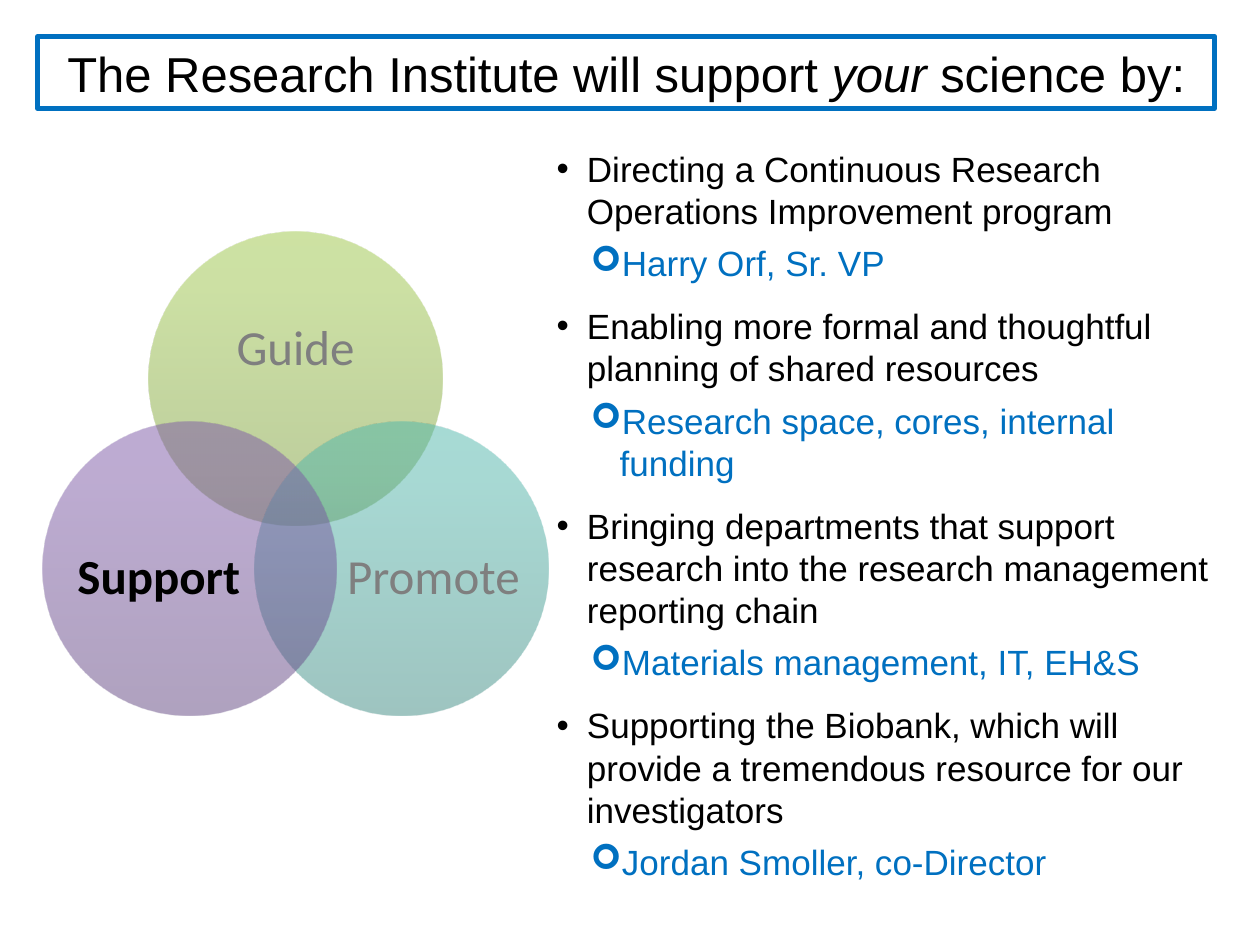
from lxml.etree import SubElement
from pptx import Presentation
from pptx.dml.color import RGBColor
from pptx.enum.shapes import MSO_SHAPE
from pptx.enum.text import MSO_ANCHOR, PP_ALIGN
from pptx.oxml.ns import qn
from pptx.util import Inches, Pt

BLUE, BLACK, GREY = "0070C0", "000000", "7F7F7F"


def add_run(p, text, size, color, font="Arial"):
    r = p.add_run()
    r.text = text
    r.font.size = Pt(size)
    r.font.name = font
    r.font.color.rgb = RGBColor.from_string(color)
    return r


def set_bullet(p, char, font, margin, hanging):
    """Give the paragraph a bullet; margin and hanging are in inches."""
    pPr = p._p.get_or_add_pPr()
    pPr.set("marL", str(Inches(margin)))
    pPr.set("indent", str(-Inches(hanging)))
    SubElement(pPr, qn("a:buFont"), typeface=font)
    SubElement(pPr, qn("a:buChar"), char=char)


prs = Presentation()
prs.slide_width, prs.slide_height = Inches(10), Inches(7.5)
s = prs.slides.add_slide(prs.slide_layouts[6])

# Venn diagram: circle position, gradient from bottom to top, label box
DIAMETER = 2.33
circles = [
    ("Guide", 1.18, 1.84, ("779737", "9BC348", "9DC746"), (1.49, 2.25, 1.71, 1.05)),
    ("Promote", 2.02, 3.35, ("3D8B83", "50B5AA", "4EB8AC"), (2.74, 3.95, 1.4, 1.28)),
    ("Support", 0.34, 3.35, ("5F4480", "7B58A6", "7C57A8"), (0.56, 3.95, 1.4, 1.28)),
]
venn = s.shapes.add_group_shape()
for label, x, y, colors, box in circles:
    sp = venn.shapes.add_shape(MSO_SHAPE.OVAL, Inches(x), Inches(y),
                               Inches(DIAMETER), Inches(DIAMETER))
    sp.shadow.inherit = False
    sp.line.fill.background()
    sp.fill.gradient()
    sp.fill.gradient_angle = 90
    stops = sp._element.spPr.find(".//" + qn("a:gsLst"))
    for stop in list(stops):
        stops.remove(stop)
    for pos, color in zip((0, 80, 100), colors):
        stop = SubElement(stops, qn("a:gs"), pos=str(pos * 1000))
        clr = SubElement(stop, qn("a:srgbClr"), val=color)
        SubElement(clr, qn("a:alpha"), val="50000")

    tf = venn.shapes.add_textbox(*[Inches(v) for v in box]).text_frame
    tf.word_wrap = True
    tf.vertical_anchor = MSO_ANCHOR.MIDDLE
    tf.margin_left = tf.margin_right = tf.margin_top = tf.margin_bottom = 0
    p = tf.paragraphs[0]
    p.alignment = PP_ALIGN.CENTER
    p.line_spacing = 0.9
    active = label == "Support"
    r = add_run(p, label, 28, BLACK if active else GREY, "Calibri")
    r.font.bold = active

# Title
sp = s.shapes.add_shape(MSO_SHAPE.RECTANGLE, Inches(0.3), Inches(0.29),
                        Inches(9.34), Inches(0.57))
sp.shadow.inherit = False
sp.fill.background()
sp.line.color.rgb = RGBColor.from_string(BLUE)
sp.line.width = Pt(3)
tf = sp.text_frame
tf.word_wrap = True
p = tf.paragraphs[0]
p.alignment = PP_ALIGN.CENTER
add_run(p, "The Research Institute will support ", 28, BLACK)
add_run(p, "your", 28, BLACK).font.italic = True
add_run(p, " science by:", 28, BLACK)

# Ways of support, each with its example
items = [
    ("Directing a Continuous Research Operations Improvement program",
     "Harry Orf, Sr. VP"),
    ("Enabling more formal and thoughtful planning of shared resources",
     "Research space, cores, internal funding"),
    ("Bringing departments that support research into the research management "
     "reporting chain", "Materials management, IT, EH&S"),
    ("Supporting the Biobank, which will provide a tremendous resource for our "
     "investigators", "Jordan Smoller, co-Director"),
]
tf = s.shapes.add_textbox(Inches(4.32), Inches(1.12), Inches(5.43), Inches(6.34)).text_frame
tf.word_wrap = True
for i, (way, example) in enumerate(items):
    p = tf.paragraphs[0] if i == 0 else tf.add_paragraph()
    p.space_after = Pt(6)
    set_bullet(p, "•", "Arial", 0.24, 0.24)
    add_run(p, way, 20, BLACK)

    p = tf.add_paragraph()
    p.level = 1
    p.space_after = Pt(6 if i == len(items) - 1 else 12)
    set_bullet(p, "➢", "Wingdings", 0.5, 0.23)
    add_run(p, example, 20, BLUE)

prs.save("out.pptx")
